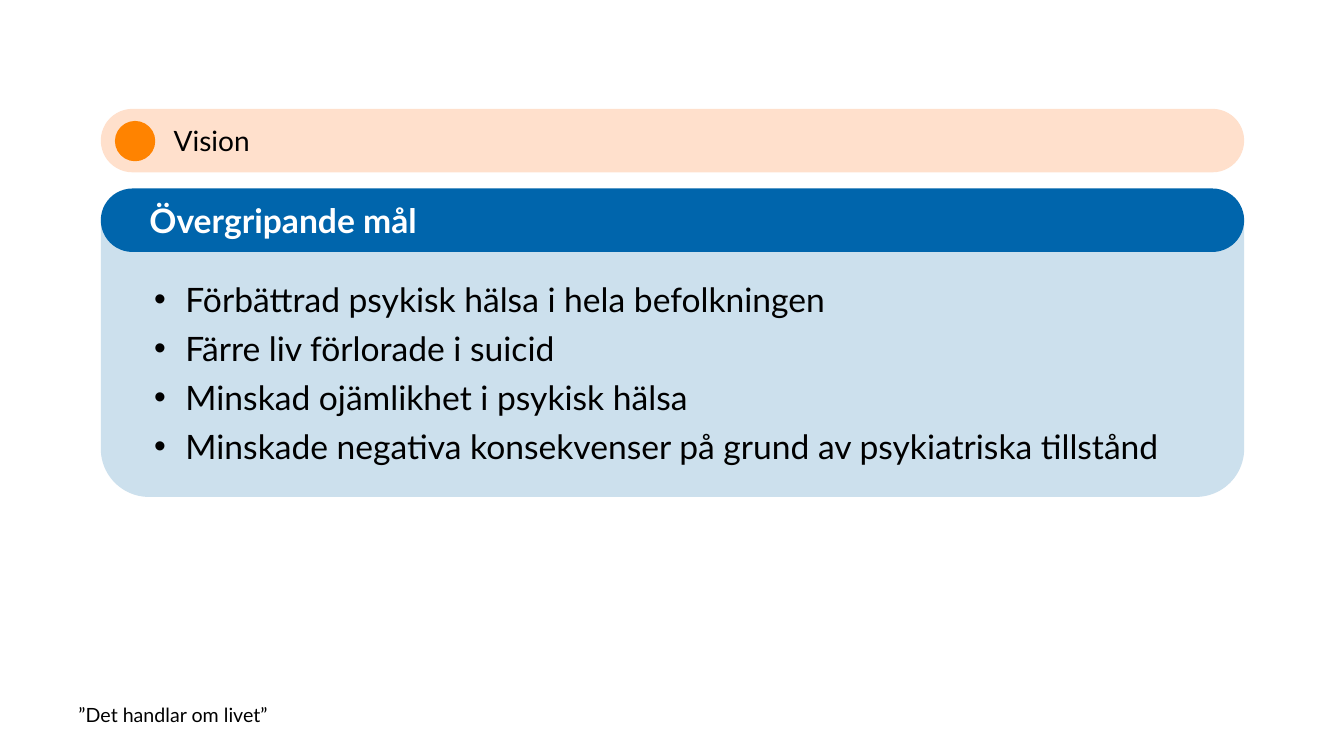
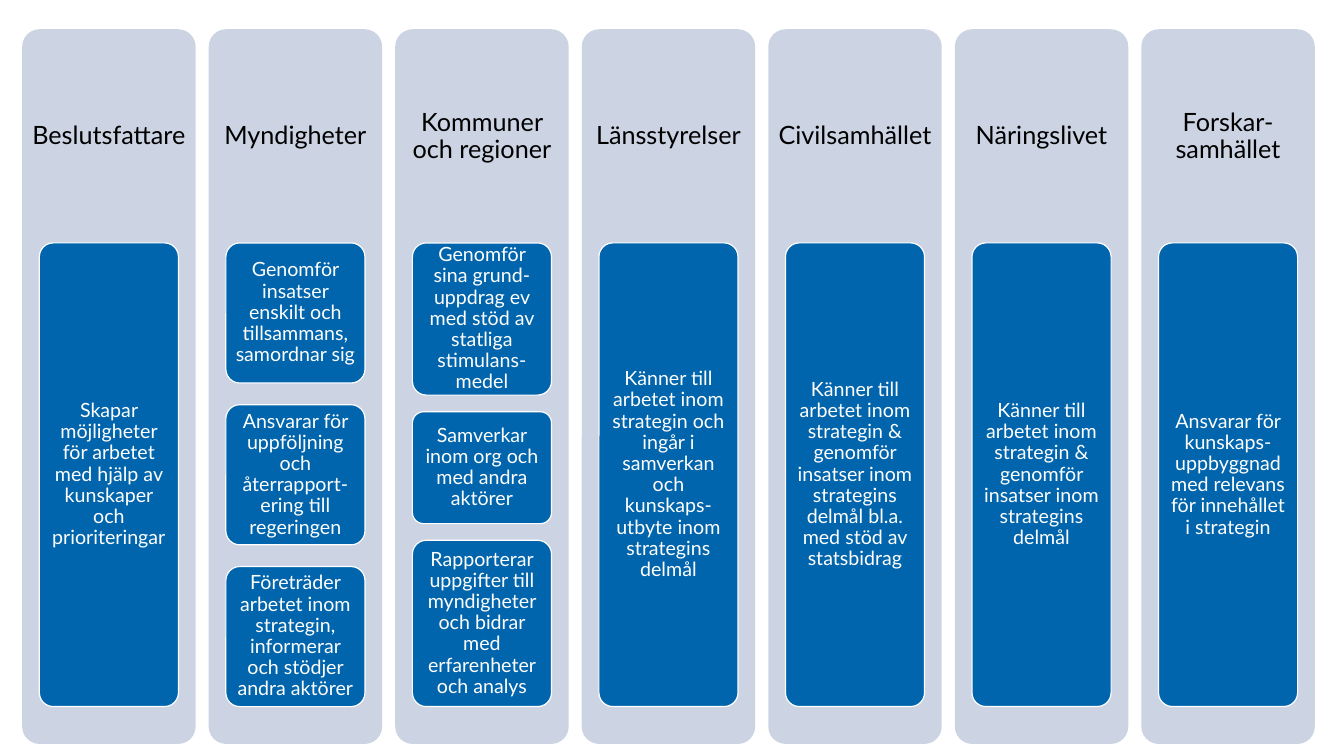
"""Builds two slides on the goals and actors of a mental health strategy."""
from lxml import etree
from pptx import Presentation
from pptx.dml.color import RGBColor
from pptx.enum.shapes import MSO_SHAPE
from pptx.enum.text import MSO_ANCHOR, PP_ALIGN
from pptx.oxml.ns import qn
from pptx.util import Inches, Pt

ROUND = MSO_SHAPE.ROUNDED_RECTANGLE
TOPS = MSO_SHAPE.ROUND_2_SAME_RECTANGLE
OVAL = MSO_SHAPE.OVAL
MIDDLE, TOP = MSO_ANCHOR.MIDDLE, MSO_ANCHOR.TOP
LEFT, CENTER = PP_ALIGN.LEFT, PP_ALIGN.CENTER

FONT = "Lato"
HUES = {
    "blue": "0065AC", "pale": "CCE0ED", "grey": "CCD3E3", "peach": "FFE0CC",
    "orange": "FF8300", "white": "FFFFFF", "black": "000000",
}
RGB = {name: RGBColor.from_string(code) for name, code in HUES.items()}
SIDES = ("margin_left", "margin_top", "margin_right", "margin_bottom")


def draw(slide, kind, box, fill, rounds=(), edge=None):
    shape = slide.shapes.add_shape(kind, *map(Inches, box))
    shape.shadow.inherit = False
    shape.fill.solid()
    shape.fill.fore_color.rgb = RGB[fill]
    for spot, value in enumerate(rounds):
        shape.adjustments[spot] = value
    if edge:
        shape.line.color.rgb = RGB[edge]
        shape.line.width = Pt(0.85)
    else:
        shape.line.fill.background()
    return shape


def write(shape, lines, size, ink, pads, anchor=MIDDLE, wrap=True,
          bold=False, bullet=False, **style):
    frame = shape.text_frame
    look = dict(zip(SIDES, map(Inches, pads)), word_wrap=wrap, vertical_anchor=anchor)
    for key, value in look.items():
        setattr(frame, key, value)
    for spot, line in enumerate(lines):
        para = frame.add_paragraph() if spot else frame.paragraphs[0]
        if bullet:
            props = para._p.get_or_add_pPr()
            props.set("marL", str(Inches(0.31)))
            props.set("indent", str(-Inches(0.31)))
            etree.SubElement(props, qn("a:buFont")).set("typeface", "Arial")
            etree.SubElement(props, qn("a:buChar")).set("char", "•")
        for key, value in {"alignment": LEFT, **style}.items():
            setattr(para, key, value)
        run = para.add_run()
        run.text = line
        for key, value in {"name": FONT, "size": Pt(size), "bold": bold}.items():
            setattr(run.font, key, value)
        run.font.color.rgb = RGB[ink]


deck = Presentation()
deck.slide_width, deck.slide_height = Inches(13.33), Inches(7.5)
blank = deck.slide_layouts[6]

goals = deck.slides.add_slide(blank)
foot = goals.shapes.add_textbox(*map(Inches, (0.68, 6.92, 2.12, 0.34)))
write(foot, ["”Det handlar om livet”"], 14, "black", (0.1, 0.05, 0.1, 0.05),
      anchor=TOP, wrap=False)

panel = draw(goals, TOPS, (1, 2.18, 11.34, 2.75), "pale", (0, 0.174))
write(panel, [
    "Förbättrad psykisk hälsa i hela befolkningen",
    "Färre liv förlorade i suicid",
    "Minskad ojämlikhet i psykisk hälsa",
    "Minskade negativa konsekvenser på grund av psykiatriska tillstånd",
], 24, "black", (0.39, 0.59, 0.39, 0.12), anchor=TOP, bullet=True, space_after=Pt(6))

BANDS = [
    ("Övergripande mål", 1.87, "blue", "white", 24, 0.39, True),
    ("Vision", 1.08, "peach", "black", 20, 0.63, False),
]
for text, top, fill, ink, size, pad, bold in BANDS:
    band = draw(goals, ROUND, (1, top, 11.34, 0.63), fill, (0.5,))
    write(band, [text], size, ink, (pad, 0.05, 0.39, 0.05), bold=bold)
draw(goals, OVAL, (1.14, 1.2, 0.4, 0.4), "orange")

ACTORS = [
    ("Beslutsfattare", [
        (4.6, "Skapar möjligheter för arbetet med hjälp av kunskaper och prioriteringar"),
    ]),
    ("Myndigheter", [
        (1.39, "Genomför insatser enskilt och tillsammans, samordnar sig"),
        (1.39, "Ansvarar för uppföljning och återrapport-ering till regeringen"),
        (1.39, "Företräder arbetet inom strategin, informerar och stödjer andra aktörer"),
    ]),
    ("Kommuner och regioner", [
        (1.51, "Genomför sina grund-uppdrag ev med stöd av statliga stimulans-medel"),
        (1.11, "Samverkar inom org och med andra aktörer"),
        (1.65, "Rapporterar uppgifter till myndigheter och bidrar med erfarenheter "
               "och analys"),
    ]),
    ("Länsstyrelser", [
        (4.6, "Känner till arbetet inom strategin och ingår i samverkan och "
              "kunskaps-utbyte inom strategins delmål"),
    ]),
    ("Civilsamhället", [
        (4.6, "Känner till arbetet inom strategin & genomför insatser inom strategins "
              "delmål bl.a. med stöd av statsbidrag"),
    ]),
    ("Näringslivet", [
        (4.6, "Känner till arbetet inom strategin & genomför insatser inom strategins "
              "delmål"),
    ]),
    ("Forskar-samhället", [
        (4.6, "Ansvarar för kunskaps-uppbyggnad med relevans för innehållet i strategin"),
    ]),
]
START, PITCH, WIDE, TALL = 0.22, 1.85, 1.72, 7.09
INSET, FIRST, STACK = 0.17, 2.41, 4.6
CARD = {"alignment": CENTER, "line_spacing": 0.9}

roles = deck.slides.add_slide(blank)
for spot, (actor, cards) in enumerate(ACTORS):
    left = START + spot * PITCH
    lane = draw(roles, ROUND, (left, 0.29, WIDE, TALL), "grey", (0.1,))
    write(lane, [actor], 18, "black", (0.02, 0.02, 0.02, 4.98), **CARD)
    gap = (STACK - sum(tall for tall, _ in cards)) / max(len(cards) - 1, 1)
    top = FIRST
    for tall, text in cards:
        box = (left + INSET, top, WIDE - 2 * INSET, tall)
        card = draw(roles, ROUND, box, "blue", (0.1,), "white")
        write(card, [text], 14, "white", (0.04, 0.03, 0.04, 0.03), **CARD)
        top += tall + gap

deck.save("out.pptx")
